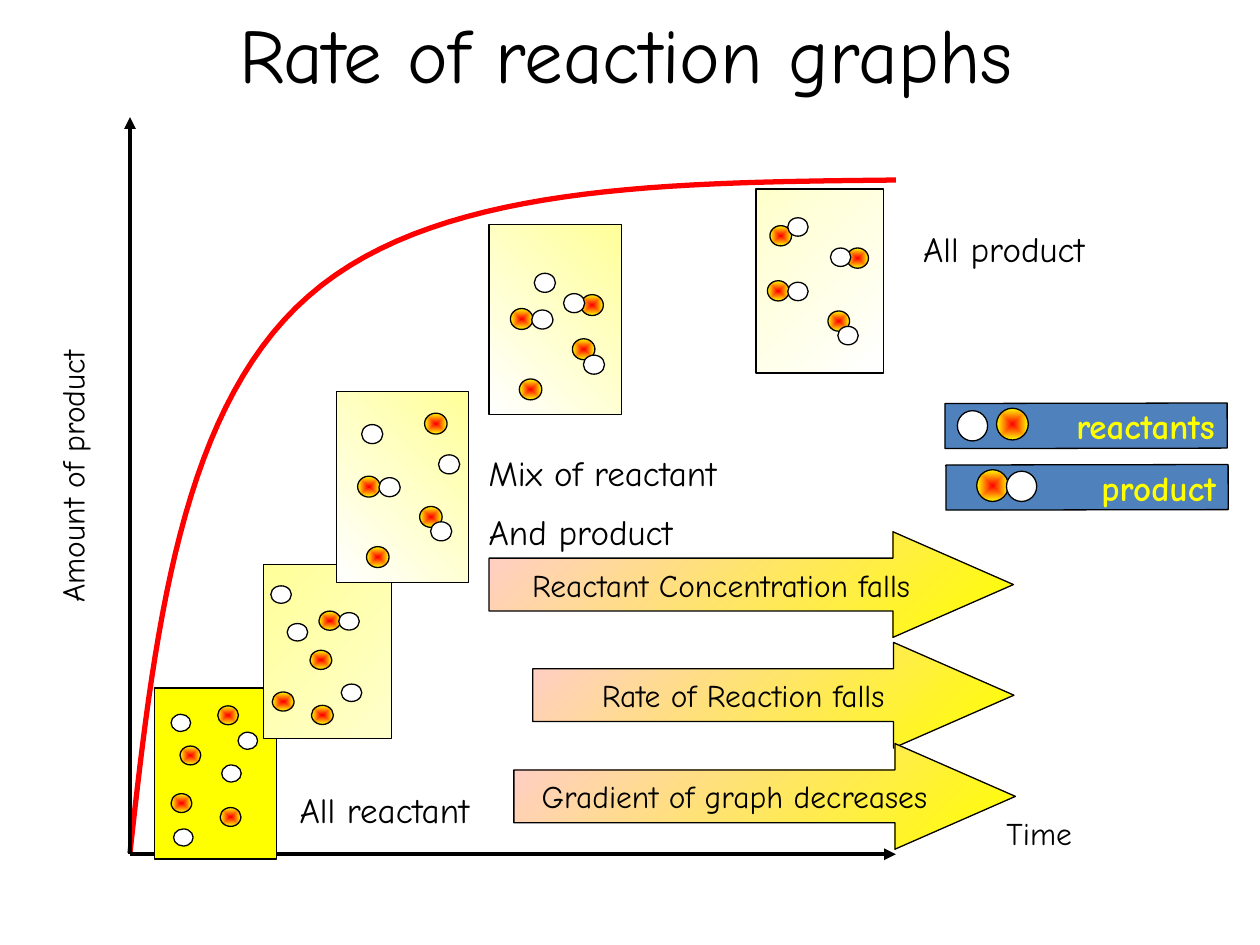
from lxml import etree
from pptx import Presentation
from pptx import util as u
from pptx.dml.color import RGBColor
from pptx.enum import shapes, text
from pptx.oxml import ns, parse_xml

BLACK = RGBColor(0, 0, 0)
WHITE = RGBColor(255, 255, 255)
RED = RGBColor(255, 0, 0)
YELLOW = RGBColor(255, 255, 0)
LEMON = RGBColor(0xFF, 0xFF, 0x99)
CREAM = RGBColor(0xFF, 0xFF, 0xCC)
PINK = RGBColor(0xFF, 0xCC, 0xCC)
BLUE = RGBColor(0x4F, 0x81, 0xBD)

KIND = shapes.MSO_SHAPE
LEFT, MID, RIGHT = text.PP_ALIGN.LEFT, text.PP_ALIGN.CENTER, text.PP_ALIGN.RIGHT
TOP, CENTRE = text.MSO_ANCHOR.TOP, text.MSO_ANCHOR.MIDDLE

GLOW = (
    f'<a:path {ns.nsdecls("a")} path="shape">'
    '<a:fillToRect l="50000" t="50000" r="50000" b="50000"/></a:path>'
)


class Page:
    """Draws on one slide; all lengths are in centimetres."""

    font = "Comic Neue"

    def __init__(self, slide):
        self.items = slide.shapes

    def letter(self, shape, words, size, color=BLACK, align=LEFT, anchor=TOP,
               wrap=False, bold=False):
        """Put styled words into a shape."""
        frame = shape.text_frame
        frame.text = words
        frame.word_wrap = wrap
        frame.vertical_anchor = anchor
        for i, par in enumerate(frame.paragraphs):
            par.alignment = align
            if i:
                par.space_before = u.Pt(size / 2)
            for run in par.runs:
                run.font.name = self.font
                run.font.size = u.Pt(size)
                run.font.bold = bold
                run.font.color.rgb = color

    def label(self, words, box, size=18, turn=0, **style):
        shape = self.items.add_textbox(*map(u.Cm, box))
        shape.rotation = turn
        self.letter(shape, words, size, **style)

    def shape(self, kind, box, fill, angle=None):
        """Fill is one colour or a pair; a pair without angle glows from the centre."""
        item = self.items.add_shape(kind, *map(u.Cm, box))
        item.shadow.inherit = False
        item.line.color.rgb = BLACK
        item.line.width = u.Pt(0.75)
        if isinstance(fill, RGBColor):
            item.fill.solid()
            item.fill.fore_color.rgb = fill
            return item
        item.fill.gradient()
        for stop, color, place in zip(item.fill.gradient_stops, fill, (0, 1)):
            stop.color.rgb = color
            stop.position = place
        if angle is None:
            lin = item._element.spPr.find(".//" + ns.qn("a:lin"))
            lin.getparent().replace(lin, parse_xml(GLOW))
        else:
            item.fill.gradient_angle = angle
        return item

    def ball(self, x, y, w, h, hot):
        self.shape(KIND.OVAL, (x, y, w, h), (RED, YELLOW) if hot else WHITE)

    def panel(self, box, fill, angle, hots, plains):
        """Box of particles, placed from its top left corner."""
        x, y, w, h = box
        self.shape(KIND.RECTANGLE, box, fill, angle)
        for spots, hot, wide, high in ((hots, True, 0.17, 0.11),
                                       (plains, False, 0.16, 0.1)):
            for dx, dy in spots:
                self.ball(x + dx, y + dy, w * wide, h * high, hot)

    def key(self, words, x, y):
        bar = self.shape(KIND.RECTANGLE, (x, y, 5.69, 0.91), BLUE)
        bar.rotation = -0.1
        self.letter(bar, words, 20, YELLOW, RIGHT, CENTRE, bold=True)

    def arrow(self, words, x, y, w):
        item = self.shape(KIND.RIGHT_ARROW, (x, y, w, 2.13), (PINK, YELLOW), 315)
        item.adjustments[0] = 0.5
        item.adjustments[1] = 1.14
        self.letter(item, words, 18, align=MID, anchor=CENTRE)

    def axis(self, x, y):
        line = self.items.add_connector(
            shapes.MSO_CONNECTOR.STRAIGHT, *map(u.Cm, (2.62, 17.22, x, y)))
        line.line.color.rgb = BLACK
        line.line.width = u.Pt(2.25)
        pen = line._element.spPr.find(ns.qn("a:ln"))
        etree.SubElement(pen, ns.qn("a:tailEnd")).set("type", "triangle")
        etree.SubElement(line._element.spPr, ns.qn("a:effectLst"))

    def curve(self, knots, steps=30):
        """Smooth line through cubic Bezier knots: an end, two handles, an end..."""
        dots = []
        for k in range(0, len(knots) - 1, 3):
            for i in range(1, steps + 1):
                t = i / steps
                ways = ((1 - t) ** 3, 3 * t * (1 - t) ** 2, 3 * t * t * (1 - t), t ** 3)
                dots.append(tuple(
                    u.Cm(sum(f * p[n] for f, p in zip(ways, knots[k:k + 4])))
                    for n in (0, 1)))
        form = self.items.build_freeform(*map(u.Cm, knots[0]))
        form.add_line_segments(dots, close=False)
        item = form.convert_to_shape()
        item.shadow.inherit = False
        item.fill.background()
        item.line.color.rgb = RED
        item.line.width = u.Pt(3)


PANELS = [
    ((3.12, 13.87, 2.46, 3.45), YELLOW, None,
     [(0.51, 1.17), (1.27, 0.36), (0.33, 2.13), (1.32, 2.41)],
     [(0.33, 0.53), (1.35, 1.55), (0.38, 2.84), (1.68, 0.89)]),
    ((5.31, 11.38, 2.59, 3.51), (LEMON, CREAM), 315,
     [(0.97, 2.84), (0.18, 2.57), (0.94, 1.73), (1.12, 0.94)],
     [(0.48, 1.19), (1.57, 2.41), (0.15, 0.43), (1.52, 0.97)]),
    ((9.86, 4.52, 2.67, 3.84), (WHITE, LEMON), 45,
     [(0.61, 3.12), (1.68, 2.31), (1.85, 1.42), (0.43, 1.7)],
     [(1.9, 2.64), (1.5, 1.4), (0.86, 1.73), (0.91, 0.99)]),
    ((15.24, 3.81, 2.57, 3.71), (CREAM, WHITE), 315,
     [(0.28, 0.74), (1.45, 2.46), (1.83, 1.19), (0.23, 1.85)],
     [(0.64, 0.58), (1.65, 2.77), (1.5, 1.19), (0.64, 1.88)]),
    ((6.78, 7.9, 2.67, 3.84), (WHITE, LEMON), 45,
     [(0.61, 3.12), (1.68, 2.31), (1.78, 0.43), (0.43, 1.7)],
     [(1.9, 2.62), (2.06, 1.27), (0.86, 1.73), (0.51, 0.66)]),
]


def main():
    deck = Presentation()
    deck.slide_width, deck.slide_height = u.Cm(25.4), u.Cm(19.05)
    page = Page(deck.slides.add_slide(deck.slide_layouts[6]))

    page.curve([(2.62, 17.2), (3.12, 12.73), (3.63, 8.23), (6.22, 5.97),
                (8.79, 3.71), (13.44, 3.68), (18.06, 3.63)])
    page.axis(2.62, 2.36)
    page.axis(18.06, 17.22)
    page.label("Amount of product", (-1.63, 9.09, 6.17, 1.02), turn=270,
               align=MID, anchor=CENTRE)
    page.label("Time", (20.04, 16.28, 1.98, 1.02))

    page.key("reactants", 19.05, 8.13)
    page.ball(19.3, 8.28, 0.61, 0.61, False)
    page.ball(20.09, 8.23, 0.64, 0.64, True)
    page.key("product", 19.07, 9.37)
    page.ball(19.69, 9.47, 0.64, 0.64, True)
    page.ball(20.29, 9.5, 0.61, 0.61, False)

    for panel in PANELS:
        page.panel(*panel)

    page.arrow("Reactant Concentration falls", 9.86, 10.72, 10.57)
    page.arrow("Rate of Reaction falls", 10.74, 12.95, 9.7)
    page.arrow("Gradient of graph decreases", 10.36, 14.99, 10.11)

    page.label("All product", (18.36, 4.47, 4.57, 1.09), 20, wrap=True)
    page.label("All reactant", (5.79, 15.77, 4.57, 1.09), 20, wrap=True)
    page.label("Mix of reactant\nAnd product", (9.6, 8.97, 7.29, 2.36), 20, wrap=True)
    page.label("Rate of reaction graphs", (1.19, 0, 22.86, 2.18), 44,
               align=MID, wrap=True)
    deck.save("out.pptx")


if __name__ == "__main__":
    main()
